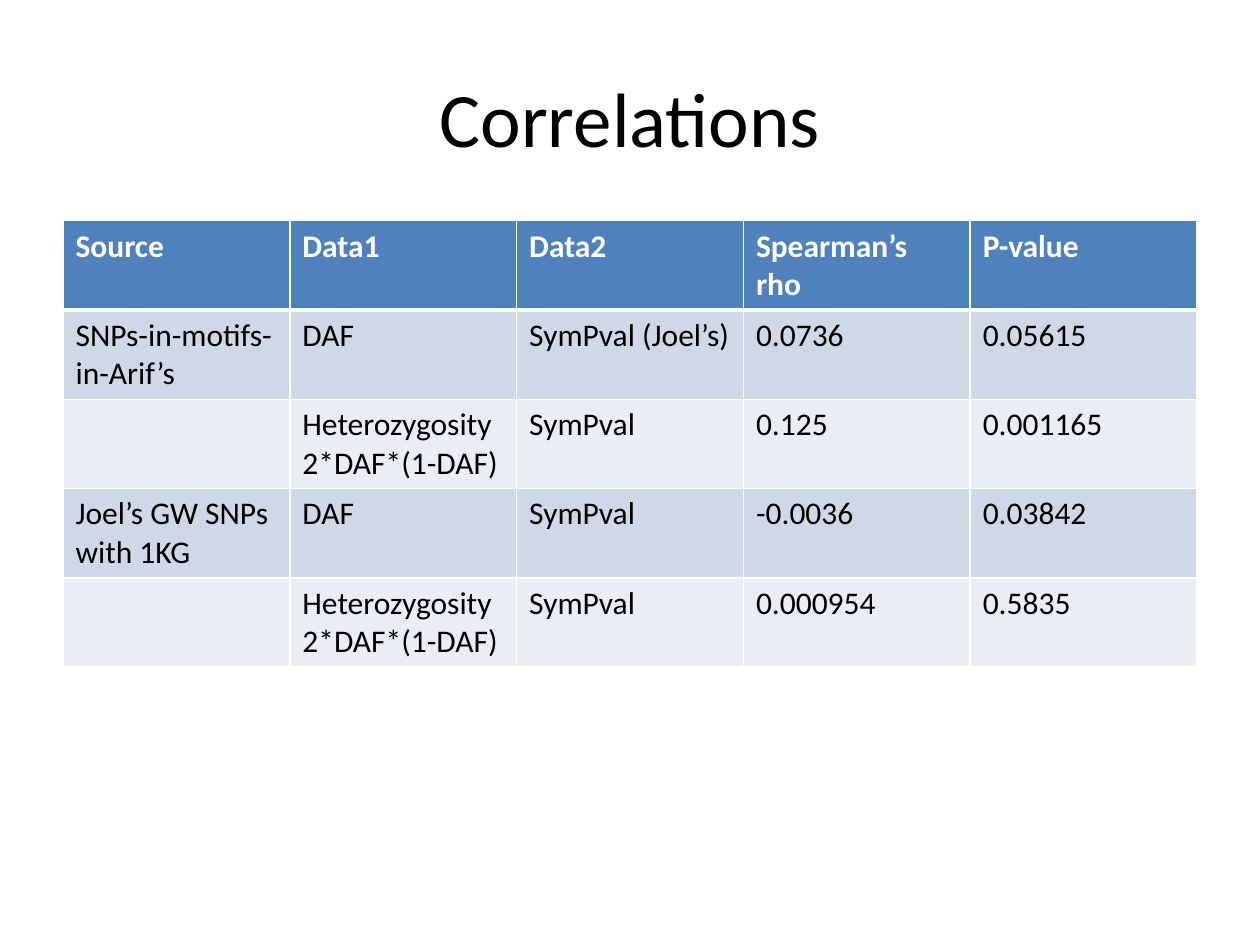
"""Build a slide with a title and a table of correlations."""
import pptx
import pptx.dml.color
import pptx.enum.text
import pptx.oxml
import pptx.oxml.ns
import pptx.util

Cm = pptx.util.Cm
Pt = pptx.util.Pt

HUES = {
    "ink": "000000",
    "paper": "FFFFFF",
    "head": "4F81BD",
    "odd": "D0D8E8",
    "even": "E9EDF4",
}
FONT = "Calibri"
HET = "Heterozygosity 2*DAF*(1-DAF)"
ROWS = [
    ["Source", "Data1", "Data2", "Spearman’s rho", "P-value"],
    ["SNPs-in-motifs-in-Arif’s", "DAF", "SymPval (Joel’s)", "0.0736", "0.05615"],
    ["", HET, "SymPval", "0.125", "0.001165"],
    ["Joel’s GW SNPs with 1KG", "DAF", "SymPval", "-0.0036", "0.03842"],
    ["", HET, "SymPval", "0.000954", "0.5835"],
]


def color(name):
    return pptx.dml.color.RGBColor.from_string(HUES[name])


def style(frame, size, hue, bold=False):
    for para in frame.paragraphs:
        for run in para.runs:
            run.font.name = FONT
            run.font.size = Pt(size)
            run.font.bold = bold
            run.font.color.rgb = color(hue)


def add_title(slide, text):
    box = slide.shapes.add_textbox(Cm(1.27), Cm(0.76), Cm(22.86), Cm(3.18))
    frame = box.text_frame
    frame.word_wrap = True
    frame.vertical_anchor = pptx.enum.text.MSO_ANCHOR.MIDDLE
    frame.text = text
    frame.paragraphs[0].alignment = pptx.enum.text.PP_ALIGN.CENTER
    style(frame, 44, "ink")


def add_edge(cell, side, width):
    space = pptx.oxml.ns.nsdecls("a")
    line = pptx.oxml.parse_xml(
        f'<a:ln{side} {space} w="{Pt(width)}"><a:solidFill>'
        f'<a:srgbClr val="{HUES["paper"]}"/></a:solidFill></a:ln{side}>'
    )
    cell._tc.get_or_add_tcPr().append(line)


def fill_cell(cell, text, row):
    head = row == 0
    edges = {"L": 1, "R": 1, "T": 3 if row == 1 else 1, "B": 3 if head else 1}
    for side, width in edges.items():
        add_edge(cell, side, width)
    cell.fill.solid()
    cell.fill.fore_color.rgb = color("head" if head else "odd" if row % 2 else "even")
    cell.text_frame.text = text
    style(cell.text_frame, 18, "paper" if head else "ink", head)


def add_grid(slide, rows):
    wide, high = Cm(22.86), Cm(1.8)
    count = len(rows[0])
    frame = slide.shapes.add_table(
        len(rows), count, Cm(1.27), Cm(4.45), wide, high * len(rows)
    )
    table = frame.table
    for col in table.columns:
        col.width = wide // count
    for row, texts in enumerate(rows):
        table.rows[row].height = high
        for col, text in enumerate(texts):
            fill_cell(table.cell(row, col), text, row)


def main():
    deck = pptx.Presentation()
    deck.slide_width, deck.slide_height = Cm(25.4), Cm(19.05)
    slide = deck.slides.add_slide(deck.slide_layouts[6])
    add_title(slide, "Correlations")
    add_grid(slide, ROWS)
    deck.save("out.pptx")


if __name__ == "__main__":
    main()
